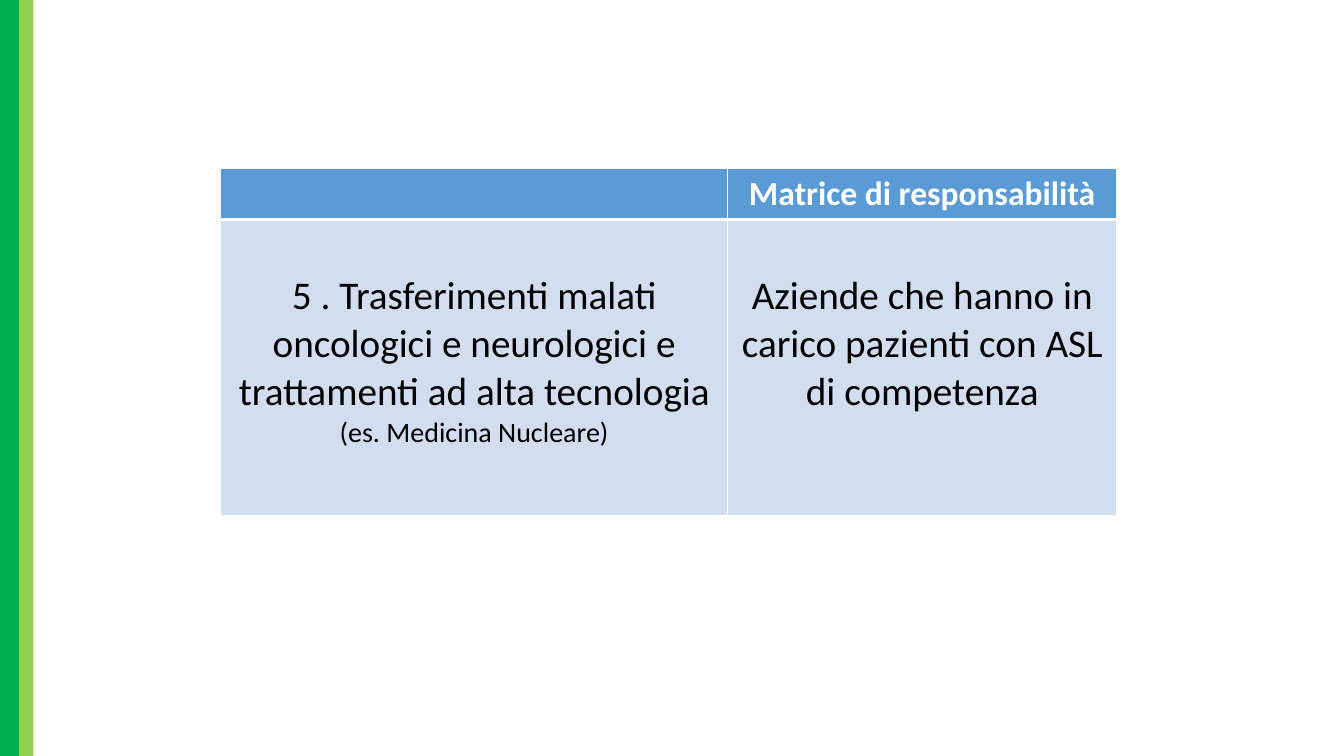
from lxml.etree import SubElement
from pptx import Presentation
from pptx.dml.color import RGBColor
from pptx.enum.shapes import MSO_SHAPE as Shape
from pptx.enum.text import MSO_ANCHOR as Anchor, PP_ALIGN as Align
from pptx.oxml.ns import qn
from pptx.util import Cm, Pt

GREEN = RGBColor(0x00, 0xB0, 0x50)
LIME = RGBColor(0x92, 0xD0, 0x50)
BLUE = RGBColor(0x5B, 0x9B, 0xD5)
PALE_BLUE = RGBColor(0xD2, 0xDE, 0xEF)
WHITE = RGBColor(0xFF, 0xFF, 0xFF)
BLACK = RGBColor(0x00, 0x00, 0x00)

# Content: each cell is a list of (text, size) spans
HEADER = [[], [("Matrice di responsabilità", 24)]]
BODY = [
    [("5 . Trasferimenti malati oncologici e neurologici e "
      "trattamenti ad alta tecnologia ", 28), ("(es. Medicina Nucleare)", 20)],
    [("Aziende che hanno in carico pazienti con ASL di competenza", 28)],
]
STRIPES = [(0.48, GREEN), (0.36, LIME)]  # width in cm, colour
COLUMN_WIDTHS = [12.78, 9.8]
ROWS = [  # spans, height, top margin, fill, text colour, bold, borders
    (HEADER, 1.25, 0.13, BLUE, WHITE, True, {"L": 1, "R": 1, "T": 1, "B": 3}),
    (BODY, 7.47, 1.33, PALE_BLUE, BLACK, False, {"L": 1, "R": 1, "T": 3, "B": 1}),
]
TABLE_LEFT, TABLE_TOP = 5.56, 4.24
PAGE_HEIGHT = 19.05


def write_text(cell, spans, color=BLACK, bold=False, font="Calibri"):
    para = cell.text_frame.paragraphs[0]
    para.alignment = Align.CENTER
    for text, size in spans:
        span = para.add_run()
        span.text = text
        span.font.name = font
        span.font.size = Pt(size)
        span.font.bold = bold
        span.font.color.rgb = color


def set_borders(cell, widths):
    properties = cell._tc.get_or_add_tcPr()
    for position, (side, width) in enumerate(widths.items()):
        line = SubElement(properties, qn(f"a:ln{side}"), w=str(Pt(width)))
        fill = SubElement(line, qn("a:solidFill"))
        SubElement(fill, qn("a:srgbClr"), val=str(WHITE))
        properties.insert(position, line)


deck = Presentation()
deck.slide_width, deck.slide_height = Cm(33.87), Cm(PAGE_HEIGHT)
page = deck.slides.add_slide(deck.slide_layouts[6])

# Stripes along the left edge
left = 0
for width, color in STRIPES:
    stripe = page.shapes.add_shape(
        Shape.RECTANGLE, Cm(left), 0, Cm(width), Cm(PAGE_HEIGHT))
    stripe.shadow.inherit = False
    stripe.fill.solid()
    stripe.fill.fore_color.rgb = color
    stripe.line.fill.background()
    left += width

# Responsibility table
table = page.shapes.add_table(
    len(ROWS), len(COLUMN_WIDTHS), Cm(TABLE_LEFT), Cm(TABLE_TOP),
    Cm(sum(COLUMN_WIDTHS)), Cm(sum(row[1] for row in ROWS))).table
table.horz_banding = False
for column, width in zip(table.columns, COLUMN_WIDTHS):
    column.width = Cm(width)
for row, (cells, height, margin, fill, color, bold, borders) in zip(table.rows, ROWS):
    row.height = Cm(height)
    for cell, spans in zip(row.cells, cells):
        cell.vertical_anchor = Anchor.TOP
        cell.margin_top = Cm(margin)
        cell.fill.solid()
        cell.fill.fore_color.rgb = fill
        set_borders(cell, borders)
        write_text(cell, spans, color=color, bold=bold)

deck.save("out.pptx")
